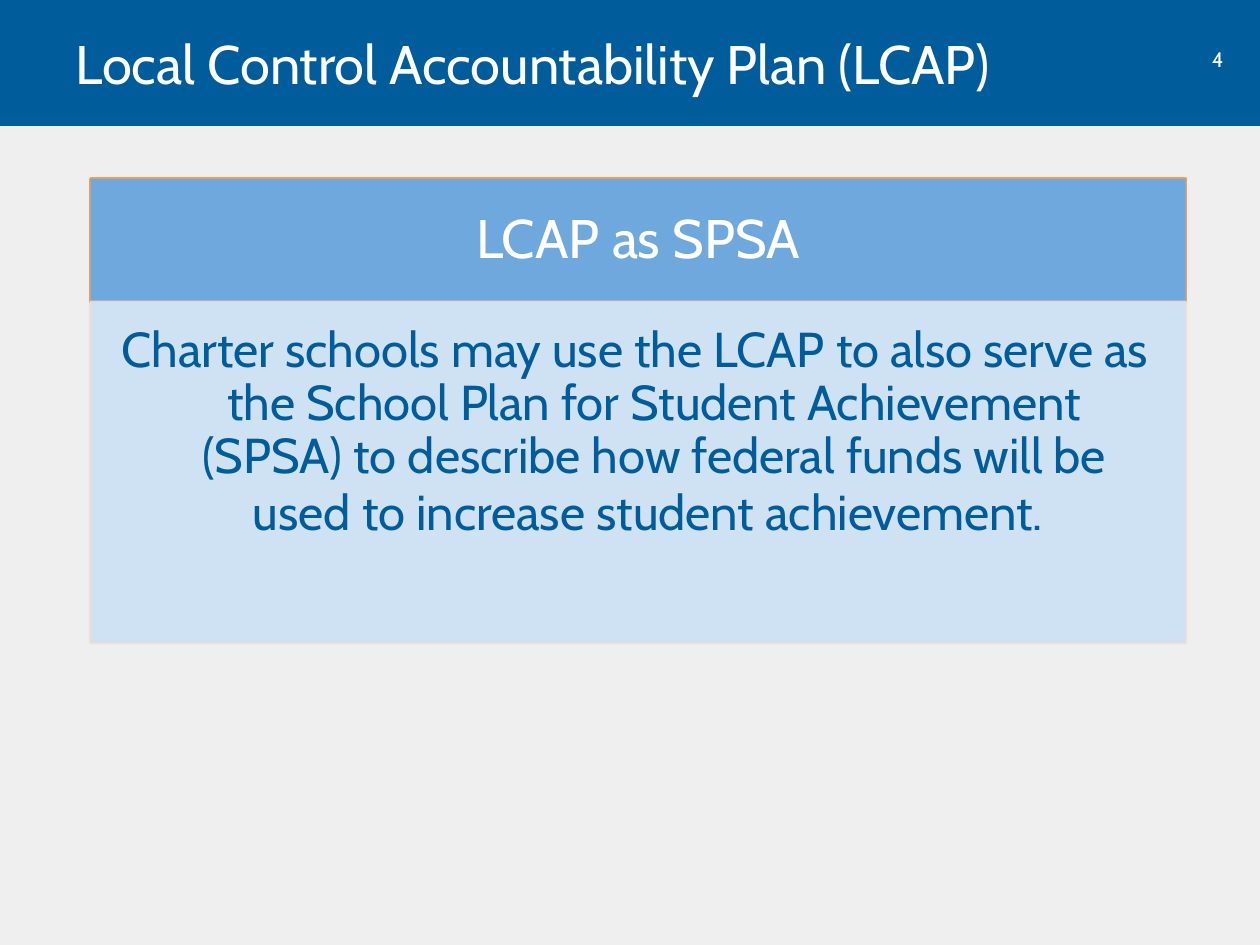
from dataclasses import dataclass

from pptx import Presentation
from pptx import util as u
from pptx.dml.color import RGBColor
from pptx.enum import shapes, text
from pptx.oxml.xmlchemy import OxmlElement


@dataclass(frozen=True)
class Theme:
    font: str = "Cabin"
    background: str = "EFEFEF"
    blue: str = "005C9A"
    white: str = "FFFFFF"
    heading_size: int = 31
    body_size: int = 28
    number_size: int = 12


THEME = Theme()

# Content
TITLE = "Local Control Accountability Plan (LCAP)"
PAGE_NUMBER = "4"
PANELS = [
    dict(
        runs=[("LCAP as SPSA", THEME.heading_size)],
        height=0.98, fill="6FA8DC", edge="EEA05A", opacity=100,
        format=dict(color=THEME.white, anchor=text.MSO_ANCHOR.MIDDLE,
                    insets=(0.24, 0.14, 0.24, 0.14)),
    ),
    dict(
        runs=[("Charter schools may use the LCAP to also serve as the School "
               "Plan for Student Achievement (SPSA) to describe how federal "
               "funds will be used to increase student achievement.", THEME.body_size),
              ("\N{NO-BREAK SPACE}", THEME.heading_size)],
        height=2.7, fill="CFE2F3", edge="F8DCCD", opacity=87,
        format=dict(color=THEME.blue, level=1, hanging=0.31,
                    insets=(0.18, 0.18, 0.24, 0.27)),
    ),
]

# Layout, in inches
WIDTH, HEIGHT = 10, 7.5
BAND_HEIGHT = 1
PANEL_LEFT, PANEL_TOP, PANEL_WIDTH = 0.72, 1.42, 8.69


def place(shape, left, top, width, height):
    shape.left, shape.top = u.Inches(left), u.Inches(top)
    shape.width, shape.height = u.Inches(width), u.Inches(height)


def write(shape, runs, color=THEME.white, align=text.PP_ALIGN.CENTER,
          anchor=text.MSO_ANCHOR.TOP, insets=(0.1, 0.05, 0.1, 0.05),
          spacing=0.9, level=0, hanging=0):
    frame = shape.text_frame
    frame.word_wrap = True
    frame.auto_size = text.MSO_AUTO_SIZE.NONE
    frame.vertical_anchor = anchor
    (frame.margin_left, frame.margin_top,
     frame.margin_right, frame.margin_bottom) = map(u.Inches, insets)
    paragraph = frame.paragraphs[0]
    paragraph.alignment, paragraph.line_spacing = align, spacing
    paragraph.level = level
    properties = paragraph._p.get_or_add_pPr()
    properties.set("marL", str(u.Inches(hanging)))
    properties.set("indent", str(-u.Inches(hanging)))
    for words, size in runs:
        run = paragraph.add_run()
        run.text = words
        run.font.name, run.font.size = THEME.font, u.Pt(size)
        run.font.color.rgb = RGBColor.from_string(color)


def set_opacity(fill, percent):
    alpha = OxmlElement("a:alpha")
    alpha.set("val", str(percent * 1000))
    fill._xPr.find(".//{*}srgbClr").append(alpha)


def add_rectangle(slide, box, fill, edge=None, opacity=100):
    shape = slide.shapes.add_shape(shapes.MSO_SHAPE.RECTANGLE, *map(u.Inches, box))
    shape.shadow.inherit = False
    shape.fill.solid()
    shape.fill.fore_color.rgb = RGBColor.from_string(fill)
    if edge:
        shape.line.width = u.Pt(2)
        shape.line.fill.solid()
        shape.line.color.rgb = RGBColor.from_string(edge)
    else:
        shape.line.fill.background()
    if opacity < 100:
        set_opacity(shape.fill, opacity)
        set_opacity(shape.line.fill, opacity)
    return shape


def main():
    presentation = Presentation()
    presentation.slide_width, presentation.slide_height = u.Inches(WIDTH), u.Inches(HEIGHT)
    slide = presentation.slides.add_slide(presentation.slide_layouts[5])
    slide.background.fill.solid()
    slide.background.fill.fore_color.rgb = RGBColor.from_string(THEME.background)

    # Header band and page number
    add_rectangle(slide, (0, 0, WIDTH, BAND_HEIGHT), THEME.blue)
    number = slide.shapes.add_textbox(0, 0, 0, 0)
    place(number, 9.44, 0.32, 0.45, 0.3)
    write(number, [(PAGE_NUMBER, THEME.number_size)], spacing=1.0)

    # Stacked panels, each over an outlined backing
    top = PANEL_TOP
    for panel in PANELS:
        box = (PANEL_LEFT, top, PANEL_WIDTH, panel["height"])
        add_rectangle(slide, box, panel["edge"], panel["edge"], panel["opacity"])
        front = add_rectangle(slide, box, panel["fill"])
        write(front, panel["runs"], **panel["format"])
        top += panel["height"]

    # Title, brought in front of the band
    title = slide.shapes.title
    place(title, 0.5, 0, 8.91, BAND_HEIGHT)
    write(title, [(TITLE, THEME.heading_size)], align=text.PP_ALIGN.LEFT,
          anchor=text.MSO_ANCHOR.MIDDLE, spacing=1.0)
    slide.shapes._spTree.append(title._element)

    presentation.save("out.pptx")


if __name__ == "__main__":
    main()
